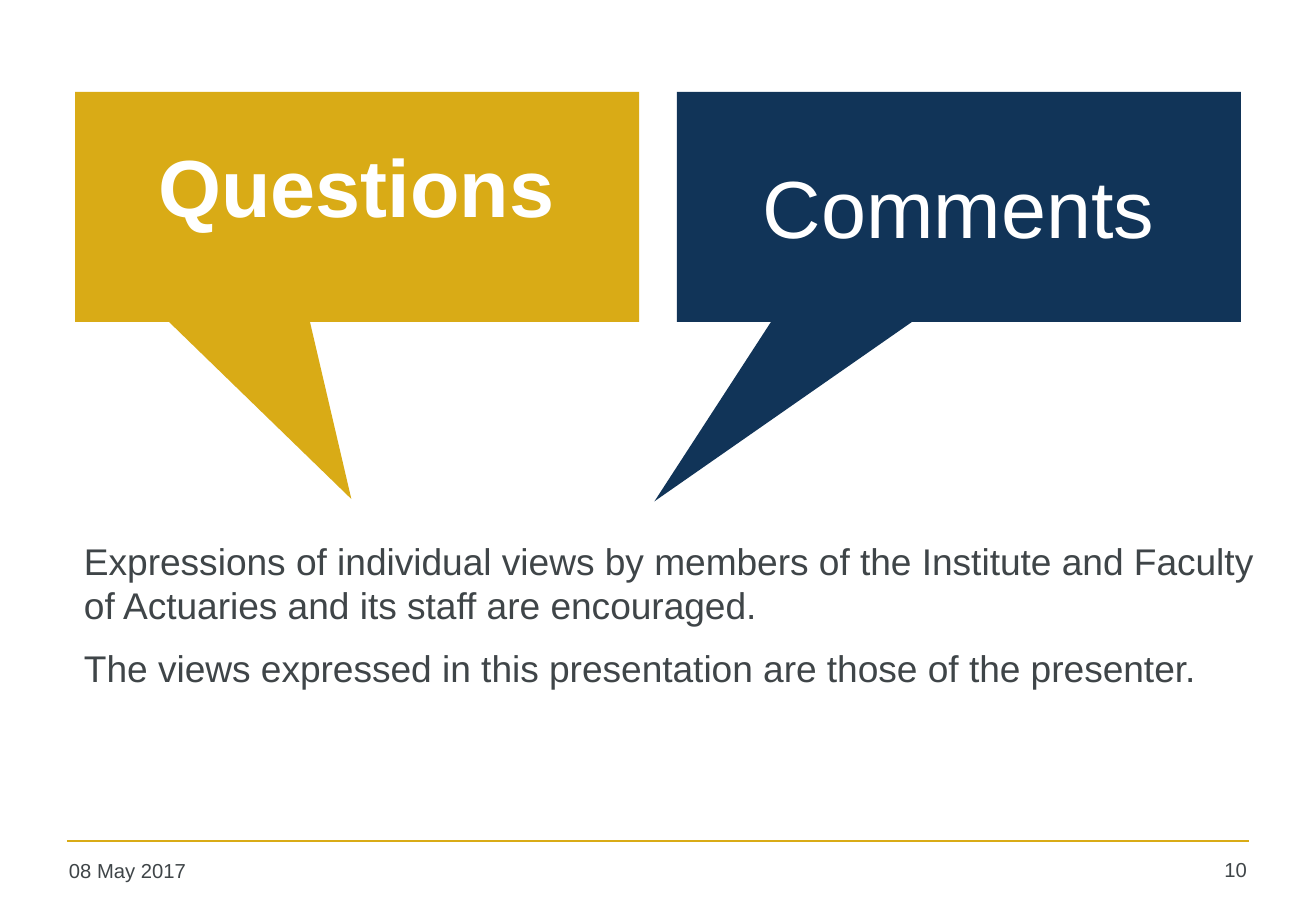
from pptx import Presentation
from pptx.dml.color import RGBColor
from pptx.enum.shapes import MSO_CONNECTOR, MSO_SHAPE
from pptx.enum.text import MSO_ANCHOR as ANCHOR, PP_ALIGN as ALIGN
from pptx.util import Pt
from lxml import etree

PX = 7526  # EMU in one px
GOLD, NAVY, GREY, WHITE = "D9AB16", "113458", "3F4548", "FFFFFF"


def color(code):
    return RGBColor.from_string(code)


def add_text(box, lines, size, code, align=ALIGN.LEFT, anchor=ANCHOR.TOP, bold=False):
    """Add a wrapped text box; box is left, top, width, height in px."""
    frame = slide.shapes.add_textbox(*[n * PX for n in box]).text_frame
    frame.word_wrap = True
    frame.vertical_anchor = anchor
    for i, line in enumerate(lines):
        para = frame.add_paragraph() if i else frame.paragraphs[0]
        para.alignment = align
        if i:
            para.space_before = Pt(size / 2)
        run = para.add_run()
        run.text = line
        font = run.font
        font.name, font.size, font.bold = "Arial", Pt(size), bold
        font.color.rgb = color(code)


deck = Presentation()
deck.slide_width, deck.slide_height = 1316 * PX, 911 * PX
slide = deck.slides.add_slide(deck.slide_layouts[6])

# Footer
rule = slide.shapes.add_connector(
    MSO_CONNECTOR.STRAIGHT, 67 * PX, 841 * PX, 1249 * PX, 841 * PX)
rule.line.color.rgb = color(GOLD)
rule.line.width = Pt(1)
props = rule._element.spPr
etree.SubElement(props, props.ln.tag.replace("}ln", "}effectLst"))
add_text((57, 852, 290, 44), ["08 May 2017"], 12, GREY)
add_text((1166, 851, 93, 45), ["10"], 12, GREY, ALIGN.RIGHT)

# Disclaimer
add_text((72, 532, 1209, 313), [
    "Expressions of individual views by members of the Institute and Faculty "
    "of Actuaries and its staff are encouraged.",
    "The views expressed in this presentation are those of the presenter.",
], 22, GREY)

# Speech bubbles: left, fill, pointer tip, label, label top, anchor, bold
bubbles = [
    (75, GOLD, (-0.01, 1.27), "Questions", 131, ANCHOR.TOP, True),
    (677, NAVY, (-0.54, 1.28), "Comments", 130, ANCHOR.MIDDLE, False),
]
for left, fill, tip, label, top, anchor, bold in bubbles:
    bubble = slide.shapes.add_shape(
        MSO_SHAPE.RECTANGULAR_CALLOUT, left * PX, 92 * PX, 564 * PX, 230 * PX)
    bubble.adjustments[0], bubble.adjustments[1] = tip
    bubble.shadow.inherit = False
    bubble.fill.solid()
    bubble.fill.fore_color.rgb = color(fill)
    bubble.line.fill.background()
    add_text((left + 28, top, 507, 152), [label], 48, WHITE, ALIGN.CENTER, anchor, bold)

deck.save("out.pptx")
